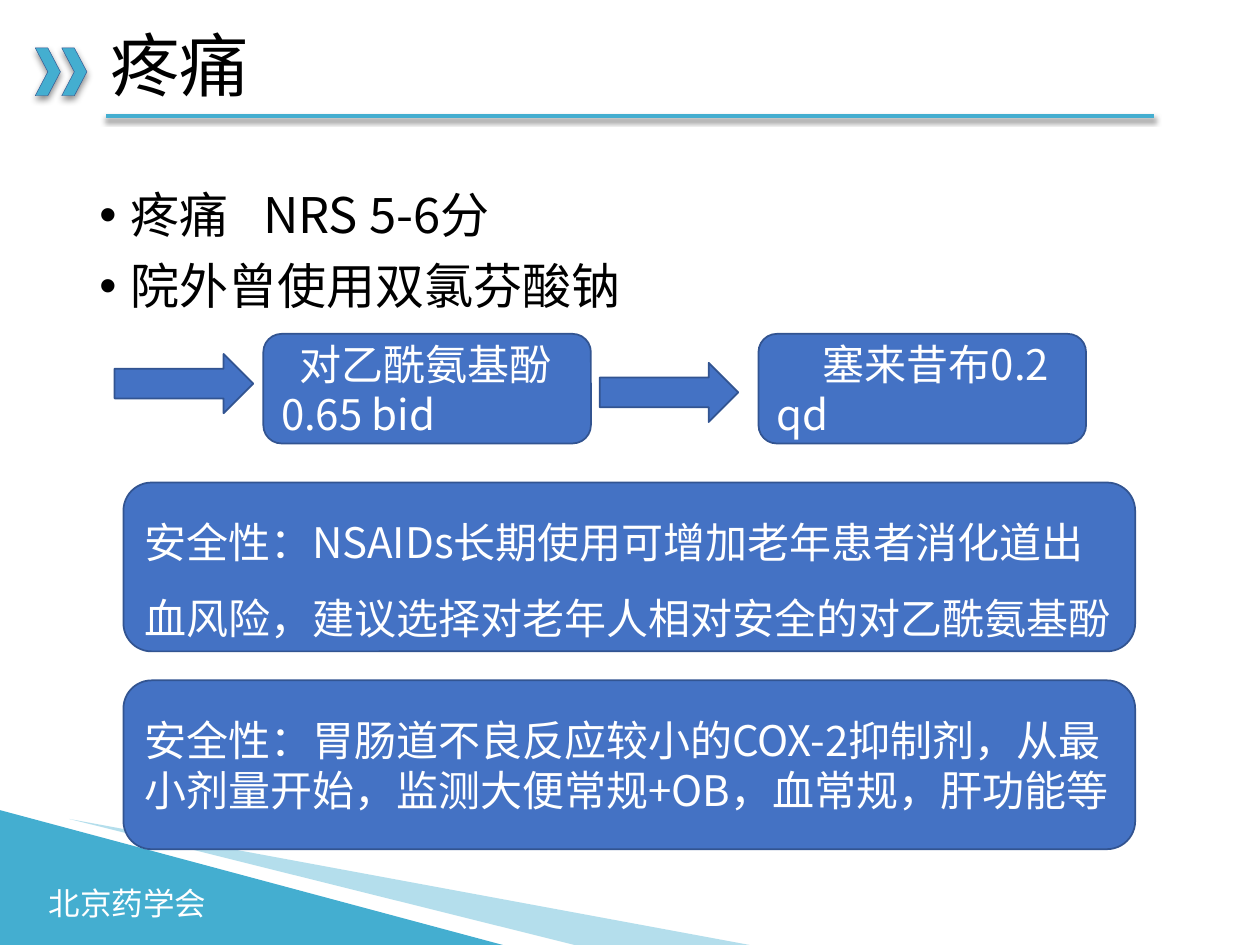
from dataclasses import dataclass, field

from lxml.etree import SubElement
from pptx import Presentation
from pptx.dml.color import RGBColor
from pptx.enum.shapes import MSO_CONNECTOR as Connector, MSO_SHAPE as Preset
from pptx.enum.text import MSO_ANCHOR as Anchor, PP_ALIGN as Align
from pptx.oxml.ns import qn
from pptx.util import Inches, Pt


@dataclass(frozen=True)
class Theme:
    font: str = "Noto Sans CJK SC"
    teal: str = "44AED0"
    blue: str = "4472C4"
    outline: str = "325491"
    black: str = "000000"
    gray: str = "808080"
    white: str = "FFFFFF"
    title: float = 39.6
    body: float = 28
    box: float = 24
    footer: float = 18


THEME = Theme()


@dataclass(frozen=True)
class Area:
    left: float
    top: float
    width: float
    height: float

    def lengths(self) -> list:
        return [Inches(v) for v in (self.left, self.top, self.width, self.height)]


@dataclass(frozen=True)
class Shadow:
    color: str
    opacity: int
    blur: float
    distance: float = 2


@dataclass(frozen=True)
class Box:
    area: Area
    text: str
    first_indent: float = 0
    formats: dict = field(default_factory=dict)


CHEVRON_SHADOW = Shadow(THEME.black, 46, 4)
RULE_SHADOW = Shadow(THEME.gray, 100, 3)

BOXES = [
    Box(Area(2.09, 2.65, 2.6, 0.87), "对乙酰氨基酚0.65 bid", 0.15),
    Box(Area(6.02, 2.65, 2.6, 0.87), "塞来昔布0.2 qd", 0.37),
    Box(Area(0.98, 3.83, 8.03, 1.34),
        "安全性：NSAIDs长期使用可增加老年患者消化道出血风险，"
        "建议选择对老年人相对安全的对乙酰氨基酚", formats={"line_spacing": 1.5}),
    Box(Area(0.98, 5.4, 8.03, 1.34),
        "安全性：胃肠道不良反应较小的COX-2抑制剂，从最小剂量开始，"
        "监测大便常规+OB，血常规，肝功能等"),
]
ARROWS = [Area(0.91, 2.81, 1.1, 0.47), Area(4.76, 2.88, 1.1, 0.47)]
CHEVRONS = [Area(left, 0.38, 0.2, 0.38) for left in (0.49, 0.28)]
BULLETS = ["疼痛\tNRS 5-6分", "院外曾使用双氯芬酸钠"]


def apply(target, formats: dict) -> None:
    for name, value in formats.items():
        setattr(target, name, value)


def set_effects(shape, shadow: Shadow | None = None) -> None:
    """Replace the theme's shadow with the given one, or with none."""
    effects = SubElement(shape._element.spPr, qn("a:effectLst"))
    if shadow:
        outer = SubElement(effects, qn("a:outerShdw"), blurRad=str(Pt(shadow.blur)),
                           dist=str(Pt(shadow.distance)), dir="5400000",
                           algn="t", rotWithShape="0")
        color = SubElement(outer, qn("a:srgbClr"), val=shadow.color)
        SubElement(color, qn("a:alpha"), val=str(shadow.opacity * 1000))


def paint(shape, fill: str, line: str | None = None, width: float = 1,
          shadow: Shadow | None = None) -> None:
    shape.fill.solid()
    shape.fill.fore_color.rgb = RGBColor.from_string(fill)
    if line:
        shape.line.color.rgb = RGBColor.from_string(line)
        shape.line.width = Pt(width)
    else:
        shape.line.fill.background()
    set_effects(shape, shadow)


def add_preset(slide, preset: Preset, area: Area, *style):
    shape = slide.shapes.add_shape(preset, *area.lengths())
    paint(shape, *style)
    return shape


def write(paragraph, text: str, size: float, color: str, formats: dict) -> None:
    apply(paragraph, {"alignment": Align.LEFT, **formats})
    run = paragraph.add_run()
    run.text = text
    apply(run.font, {"size": Pt(size), "name": THEME.font})
    run.font.color.rgb = RGBColor.from_string(color)
    SubElement(run.font._element, qn("a:ea"), typeface=THEME.font)


def add_text(slide, area: Area, text: str, size: float, color: str,
             frame_formats: dict, formats: dict) -> None:
    frame = slide.shapes.add_textbox(*area.lengths()).text_frame
    apply(frame, frame_formats)
    write(frame.paragraphs[0], text, size, color, formats)


def add_bullets(slide, area: Area, lines: list[str]) -> None:
    frame = slide.shapes.add_textbox(*area.lengths()).text_frame
    frame.word_wrap = True
    for index, line in enumerate(lines):
        paragraph = frame.add_paragraph() if index else frame.paragraphs[0]
        properties = paragraph._p.get_or_add_pPr()
        apply_indent(properties, 0.25, -0.25)
        SubElement(properties, qn("a:buFont"), typeface="Arial")
        SubElement(properties, qn("a:buChar"), char="•")
        if "\t" in line:
            tabs = SubElement(properties, qn("a:tabLst"))
            SubElement(tabs, qn("a:tab"), pos=str(Inches(1.3)), algn="l")
        write(paragraph, line, THEME.body, THEME.black,
              {"line_spacing": 0.9, "space_before": Pt(10 if index else 0)})


def apply_indent(properties, margin: float, first: float) -> None:
    properties.set("marL", str(Inches(margin)))
    properties.set("indent", str(Inches(first)))


def add_box(slide, box: Box) -> None:
    shape = add_preset(slide, Preset.ROUNDED_RECTANGLE, box.area,
                       THEME.blue, THEME.outline)
    frame = shape.text_frame
    apply(frame, {"word_wrap": True, "vertical_anchor": Anchor.MIDDLE})
    paragraph = frame.paragraphs[0]
    apply_indent(paragraph._p.get_or_add_pPr(), 0, box.first_indent)
    write(paragraph, box.text, THEME.box, THEME.white, box.formats)


def add_decoration(slide) -> None:
    rule = slide.shapes.add_connector(
        Connector.STRAIGHT, *[Inches(v) for v in (9.16, 0.92, 0.84, 0.92)])
    rule.line.color.rgb = RGBColor.from_string(THEME.teal)
    rule.line.width = Pt(2.25)
    set_effects(rule, RULE_SHADOW)

    corner = add_preset(slide, Preset.ISOSCELES_TRIANGLE,
                        Area(0, 6.43, 3.99, 1.07), THEME.teal)
    corner.adjustments[0] = 0
    add_text(slide, Area(0.29, 6.97, 1.46, 0.4), "北京药学会", THEME.footer,
             THEME.white, {"word_wrap": False}, {})

    builder = slide.shapes.build_freeform(Inches(0.55), Inches(6.5))
    builder.add_line_segments(
        [(Inches(x), Inches(y)) for x, y in ((5.95, 7.5), (4.56, 7.5))])
    sweep = builder.convert_to_shape()
    paint(sweep, THEME.teal)
    color = sweep._element.spPr.find(qn("a:solidFill"))[0]
    SubElement(color, qn("a:alpha"), val="40000")

    for area in CHEVRONS:
        add_preset(slide, Preset.CHEVRON, area, THEME.teal, THEME.outline,
                   0.25, CHEVRON_SHADOW)


def main() -> None:
    presentation = Presentation()
    apply(presentation, {"slide_width": Inches(10), "slide_height": Inches(7.5)})
    slide = presentation.slides.add_slide(presentation.slide_layouts[6])
    add_decoration(slide)
    add_text(slide, Area(0.78, 0.22, 7.64, 0.65), "疼痛", THEME.title, THEME.black,
             {"word_wrap": True, "vertical_anchor": Anchor.MIDDLE},
             {"line_spacing": 0.9})
    add_bullets(slide, Area(0.69, 1.47, 8.62, 4.95), BULLETS)
    for area in ARROWS:
        add_preset(slide, Preset.RIGHT_ARROW, area, THEME.blue, THEME.outline)
    for box in BOXES:
        add_box(slide, box)
    presentation.save("out.pptx")


if __name__ == "__main__":
    main()
